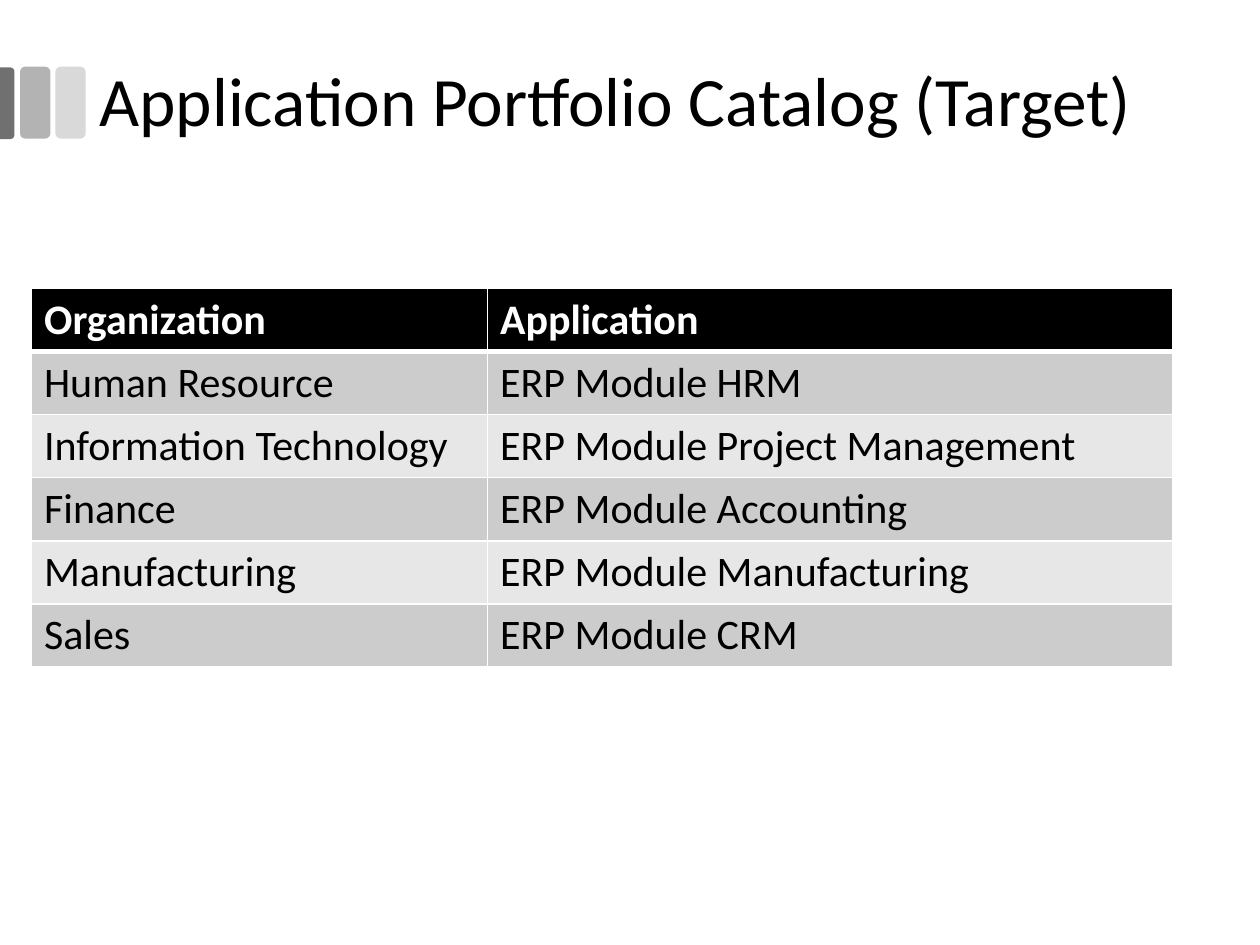
from lxml import etree
from pptx import Presentation
from pptx.dml.color import RGBColor
from pptx.enum.shapes import MSO_SHAPE
from pptx.enum.text import MSO_ANCHOR
from pptx.oxml.ns import qn
from pptx.util import Inches, Pt

ROUNDED = MSO_SHAPE.ROUNDED_RECTANGLE
ROUNDED_TOP = MSO_SHAPE.ROUND_2_SAME_RECTANGLE
MIDDLE = MSO_ANCHOR.MIDDLE
FONT = "Calibri"
BLACK, WHITE = "000000", "FFFFFF"
BAND_COLORS = ("E7E7E7", "CCCCCC")
COLUMN_WIDTHS = (3.62, 5.44)
ROW_HEIGHT = 0.5
CATALOG = (
    ("Organization", "Application"),
    ("Human Resource", "ERP Module HRM"),
    ("Information Technology", "ERP Module Project Management"),
    ("Finance", "ERP Module Accounting"),
    ("Manufacturing", "ERP Module Manufacturing"),
    ("Sales", "ERP Module CRM"),
)


def paint(fill, color):
    fill.solid()
    fill.fore_color.rgb = RGBColor.from_string(color)


def write_text(frame, text, size=24, color=BLACK, bold=False, line_spacing=None):
    para = frame.paragraphs[0]
    para.line_spacing = line_spacing
    span = para.add_run()
    span.text = text
    span.font.name = FONT
    span.font.size = Pt(size)
    span.font.bold = bold
    span.font.color.rgb = RGBColor.from_string(color)


def add_bar(page, kind, left, top, width, height, color, rotation=0):
    bar = page.shapes.add_shape(
        kind, Inches(left), Inches(top), Inches(width), Inches(height))
    bar.shadow.inherit = False
    bar.line.fill.background()
    bar.rotation = rotation
    paint(bar.fill, color)
    return bar


def add_title(page, text):
    box = page.shapes.add_textbox(
        Inches(0.69), Inches(0.17), Inches(8.62), Inches(1.31))
    frame = box.text_frame
    frame.word_wrap = True
    frame.vertical_anchor = MIDDLE
    write_text(frame, text, size=39.6, line_spacing=0.9)


def set_borders(cell, color, **widths):
    properties = cell._tc.get_or_add_tcPr()
    for side, width in widths.items():
        line = etree.SubElement(properties, qn(f"a:ln{side}"), w=str(Pt(width)))
        fill = etree.SubElement(line, qn("a:solidFill"))
        etree.SubElement(fill, qn("a:srgbClr"), val=color)


def add_catalog(page, rows):
    table = page.shapes.add_table(
        len(rows), len(COLUMN_WIDTHS), Inches(0.25), Inches(2.29),
        Inches(sum(COLUMN_WIDTHS)), Inches(ROW_HEIGHT * len(rows))).table
    for column, width in zip(table.columns, COLUMN_WIDTHS):
        column.width = Inches(width)
    for row_index, row in enumerate(rows):
        header = row_index == 0
        for column_index, text in enumerate(row):
            cell = table.cell(row_index, column_index)
            set_borders(cell, WHITE, L=1, R=1,
                        T=3 if row_index == 1 else 1, B=3 if header else 1)
            paint(cell.fill, BLACK if header else BAND_COLORS[row_index % 2])
            write_text(cell.text_frame, text,
                       color=WHITE if header else BLACK, bold=header)


def main():
    deck = Presentation()
    deck.slide_width, deck.slide_height = Inches(10), Inches(7.5)
    page = deck.slides.add_slide(deck.slide_layouts[6])
    paint(page.background.fill, WHITE)
    for left, color in ((0.44, "D9D9D9"), (0.16, "B3B3B3")):
        add_bar(page, ROUNDED, left, 0.53, 0.24, 0.57, color)
    edge_bar = add_bar(page, ROUNDED_TOP, -0.23, 0.76, 0.57, 0.12, "707070", 90)
    edge_bar.adjustments[0] = 0.29
    add_title(page, "Application Portfolio Catalog (Target)")
    add_catalog(page, CATALOG)
    deck.save("out.pptx")


if __name__ == "__main__":
    main()
